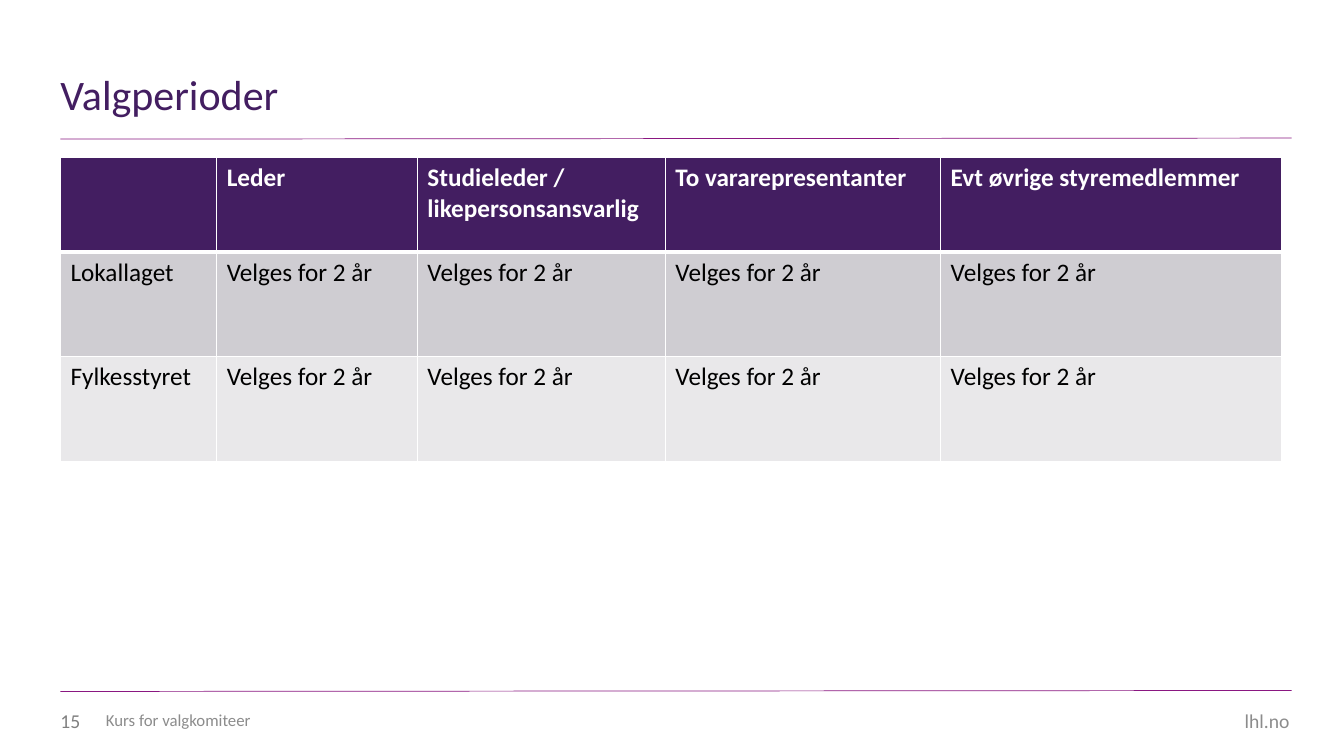
import pptx
import pptx.util
import pptx.dml.color
import pptx.enum.shapes
import pptx.enum.text
import pptx.oxml.ns
import lxml.etree

Inches = pptx.util.Inches
Pt = pptx.util.Pt
ALIGN = pptx.enum.text.PP_ALIGN
ANCHOR = pptx.enum.text.MSO_ANCHOR
qn = pptx.oxml.ns.qn

COLORS = {
    "purple": "431E61",
    "rule": "8A1781",
    "footer": "8C8C8C",
    "number": "808080",
    "band_dark": "CFCDD2",
    "band_light": "E9E8EA",
    "white": "FFFFFF",
    "black": "000000",
}


def rgb(name):
    return pptx.dml.color.RGBColor.from_string(COLORS[name])


def write(frame, text, size, color, bold=False, align=ALIGN.LEFT):
    frame.text = text
    for para in frame.paragraphs:
        para.alignment = align
        for span in para.runs:
            span.font.color.rgb = rgb(color)
            for name, value in {"name": "Calibri", "size": Pt(size), "bold": bold}.items():
                setattr(span.font, name, value)


deck = pptx.Presentation()
deck.slide_width = Inches(13.33)
deck.slide_height = Inches(7.5)
page = deck.slides.add_slide(deck.slide_layouts[5])

NO_MARGINS = {"margin_left": 0, "margin_top": 0, "margin_right": 0, "margin_bottom": 0, "word_wrap": True}

for top in (1.38, 6.86):
    rule = page.shapes.add_connector(
        pptx.enum.shapes.MSO_CONNECTOR.STRAIGHT,
        Inches(0.6), Inches(top), Inches(12.81), Inches(top - 0.01),
    )
    rule.line.color.rgb = rgb("rule")
    rule.line.width = Pt(0.5)
    lxml.etree.SubElement(rule._element.spPr, qn("a:effectLst"))

title = page.shapes.title
for name, value in {"left": 0.6, "top": 0.4, "width": 12.2, "height": 0.79}.items():
    setattr(title, name, Inches(value))
for name, value in {**NO_MARGINS, "vertical_anchor": ANCHOR.BOTTOM}.items():
    setattr(title.text_frame, name, value)
write(title.text_frame, "Valgperioder", 30, "purple")
title.text_frame.paragraphs[0].line_spacing = 0.9

footer_items = [
    ("15", 0.6, 0.44, 14, "number", ALIGN.LEFT),
    ("Kurs for valgkomiteer", 1.05, 10.94, 12, "footer", ALIGN.LEFT),
    ("lhl.no", 11.31, 1.48, 14, "footer", ALIGN.RIGHT),
]
for text, left, width, size, color, align in footer_items:
    box = page.shapes.add_textbox(Inches(left), Inches(6.95), Inches(width), Inches(0.39))
    for name, value in {**NO_MARGINS, "vertical_anchor": ANCHOR.MIDDLE}.items():
        setattr(box.text_frame, name, value)
    write(box.text_frame, text, size, color, align=align)

term = "Velges for 2 år"
rows = [
    ["", "Leder", "Studieleder /\nlikepersonsansvarlig", "To vararepresentanter", "Evt øvrige styremedlemmer"],
    ["Lokallaget"] + [term] * 4,
    ["Fylkesstyret"] + [term] * 4,
]
row_styles = [
    (0.94, "purple", "white", True, 1, 3),
    (1.04, "band_dark", "black", False, 3, 1),
    (1.04, "band_light", "black", False, 1, 1),
]
column_widths = [1.55, 1.99, 2.46, 2.73, 3.38]

table = page.shapes.add_table(
    len(rows), len(column_widths), Inches(0.6), Inches(1.56), Inches(sum(column_widths)), Inches(3.02)
).table
for column, width in zip(table.columns, column_widths):
    column.width = Inches(width)

for row, texts, style in zip(table.rows, rows, row_styles):
    height, fill, color, bold, top_border, bottom_border = style
    row.height = Inches(height)
    borders = {"a:lnL": 1, "a:lnR": 1, "a:lnT": top_border, "a:lnB": bottom_border}
    for cell, text in zip(row.cells, texts):
        properties = cell._tc.get_or_add_tcPr()
        for tag, weight in borders.items():
            border = lxml.etree.SubElement(properties, qn(tag), w=str(Pt(weight)))
            paint = lxml.etree.SubElement(border, qn("a:solidFill"))
            lxml.etree.SubElement(paint, qn("a:srgbClr"), val=COLORS["white"])
        cell.fill.solid()
        cell.fill.fore_color.rgb = rgb(fill)
        write(cell.text_frame, text, 18, color, bold)

deck.save("out.pptx")
